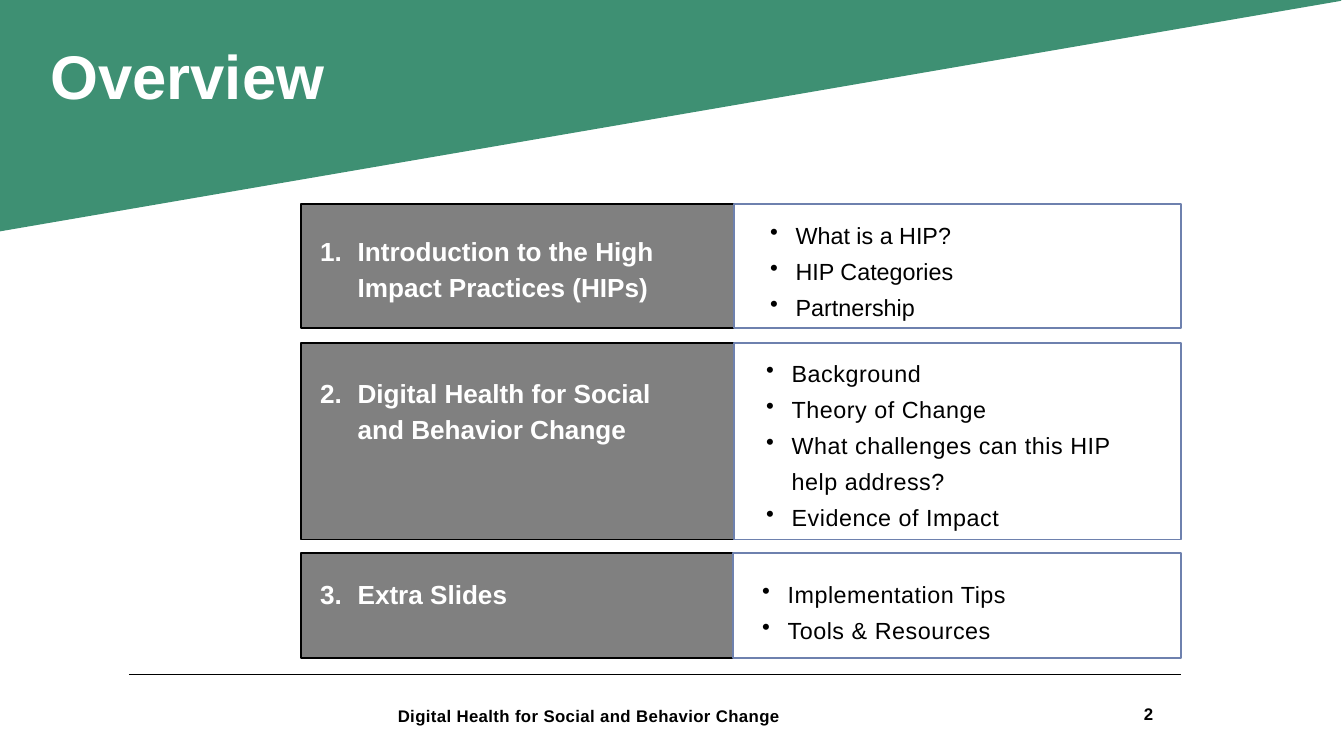
from lxml import etree
from pptx import Presentation
from pptx.dml.color import RGBColor
from pptx.enum.shapes import MSO_CONNECTOR, MSO_SHAPE
from pptx.enum.text import MSO_ANCHOR, MSO_AUTO_SIZE, PP_ALIGN
from pptx.oxml.ns import qn
from pptx.util import Pt

RECTANGLE = MSO_SHAPE.RECTANGLE
STRAIGHT = MSO_CONNECTOR.STRAIGHT
TOP, MIDDLE = MSO_ANCHOR.TOP, MSO_ANCHOR.MIDDLE
LEFT, RIGHT = PP_ALIGN.LEFT, PP_ALIGN.RIGHT
NO_AUTOSIZE = MSO_AUTO_SIZE.NONE

COLORS = {
    "green": "3E9073",
    "gray": "808080",
    "blue": "6E81AE",
    "white": "FFFFFF",
    "black": "000000",
}
TITLE = {"size": 66, "bold": True, "color": "white", "line": 75.6}
HEADING = {"size": 28, "bold": True, "color": "white", "line": 38.5, "indent": 40.3}
ITEM = {"size": 25, "bold": False, "color": "black", "line": 38.5, "indent": 27.4}
FOOTER = {"size": 18, "bold": True, "color": "black", "line": 25.2, "spacing": 0.4}
PAGE_NUMBER = {"size": 18, "bold": True, "color": "black", "align": RIGHT, "anchor": MIDDLE}

SECTIONS = [
    {"heading": "Introduction to the High Impact Practices (HIPs)",
     "items": ["What is a HIP?", "HIP Categories", "Partnership"],
     "top": 218.2, "height": 133.2, "split": 786.2, "heading_top": 247.7,
     "items_at": (825.1, 228.2), "spacing": 0},
    {"heading": "Digital Health for Social and Behavior Change",
     "items": ["Background", "Theory of Change",
               "What challenges can this HIP help address?", "Evidence of Impact"],
     "top": 367.9, "height": 210.2, "split": 786.2, "heading_top": 399.6,
     "items_at": (820.8, 376.6), "spacing": 0.6},
    {"heading": "Extra Slides",
     "items": ["Implementation Tips", "Tools & Resources"],
     "top": 592.6, "height": 112.3, "split": 785.3, "heading_top": 614.9,
     "items_at": (816.5, 612.7), "spacing": 0.6},
]
TABLE_LEFT, TABLE_RIGHT = 322.6, 1265.8


def write(shape, lines, style, bullet=None):
    frame = shape.text_frame
    frame_format = {
        "word_wrap": True, "auto_size": NO_AUTOSIZE,
        "vertical_anchor": style.get("anchor", TOP),
        "margin_left": 0, "margin_right": 0, "margin_top": 0, "margin_bottom": 0,
    }
    for name, value in frame_format.items():
        setattr(frame, name, value)
    for index, line in enumerate(lines):
        paragraph = frame.add_paragraph() if index else frame.paragraphs[0]
        properties = paragraph._p.get_or_add_pPr()
        if bullet:
            indent = Pt(style["indent"])
            properties.set("marL", str(indent))
            properties.set("indent", str(-indent))
            tag, attributes = bullet
            etree.SubElement(properties, qn(tag), attributes)
        paragraph.alignment = style.get("align", LEFT)
        if "line" in style:
            paragraph.line_spacing = Pt(style["line"])
        run = paragraph.add_run()
        run.text = line
        font_format = {"name": "Arial", "size": Pt(style["size"]), "bold": style["bold"]}
        for name, value in font_format.items():
            setattr(run.font, name, value)
        run.font.color.rgb = RGBColor.from_string(COLORS[style["color"]])
        if style.get("spacing"):
            run._r.get_or_add_rPr().set("spc", str(round(style["spacing"] * 100)))


def paint(shape, fill, line):
    shape.shadow.inherit = False
    shape.fill.solid()
    shape.fill.fore_color.rgb = RGBColor.from_string(COLORS[fill])
    shape.line.color.rgb = RGBColor.from_string(COLORS[line])
    shape.line.width = Pt(2)


presentation = Presentation()
presentation.slide_width = Pt(1440)
presentation.slide_height = Pt(810)
slide = presentation.slides.add_slide(presentation.slide_layouts[5])
shapes = slide.shapes

builder = shapes.build_freeform(Pt(-0.7), 0)
builder.add_line_segments([(Pt(-0.7), Pt(247)), (Pt(1436.4), 0)], close=True)
banner = builder.convert_to_shape()
paint(banner, "green", "green")
shapes._spTree.remove(banner._element)
shapes._spTree.insert(2, banner._element)

title = shapes.title
title_place = {"left": 54, "top": 43.9, "width": 409, "height": 77}
for name, value in title_place.items():
    setattr(title, name, Pt(value))
write(title, ["Overview"], TITLE)

for number, section in enumerate(SECTIONS, start=1):
    top, height, split = section["top"], section["height"], section["split"]
    cells = [(TABLE_LEFT, split, "gray", "black"), (split, TABLE_RIGHT, "white", "blue")]
    for left, right, fill, line in cells:
        cell = shapes.add_shape(RECTANGLE, Pt(left), Pt(top), Pt(right - left), Pt(height))
        paint(cell, fill, line)

    heading = shapes.add_textbox(Pt(342.9), Pt(section["heading_top"]), Pt(402), Pt(73.4))
    numbering = {"type": "arabicPeriod", "startAt": str(number)}
    write(heading, [section["heading"]], HEADING, ("a:buAutoNum", numbering))

    left, top = section["items_at"]
    items = shapes.add_textbox(Pt(left), Pt(top), Pt(415), Pt(section["top"] + height - top))
    item_style = ITEM | {"spacing": section["spacing"]}
    write(items, section["items"], item_style, ("a:buChar", {"char": "•"}))

rule = shapes.add_connector(STRAIGHT, Pt(138.2), Pt(722.9), Pt(TABLE_RIGHT), Pt(722.9))
rule.line.color.rgb = RGBColor.from_string(COLORS["black"])
rule.line.width = Pt(0.75)
etree.SubElement(rule._element.spPr, qn("a:effectLst"))

footer = shapes.add_textbox(Pt(426.2), Pt(752.4), Pt(770), Pt(24))
write(footer, ["Digital Health for Social and Behavior Change"], FOOTER)

page_number = shapes.add_textbox(Pt(1075), Pt(750.2), Pt(160.6), Pt(28.8))
write(page_number, ["2"], PAGE_NUMBER)

presentation.save("out.pptx")
